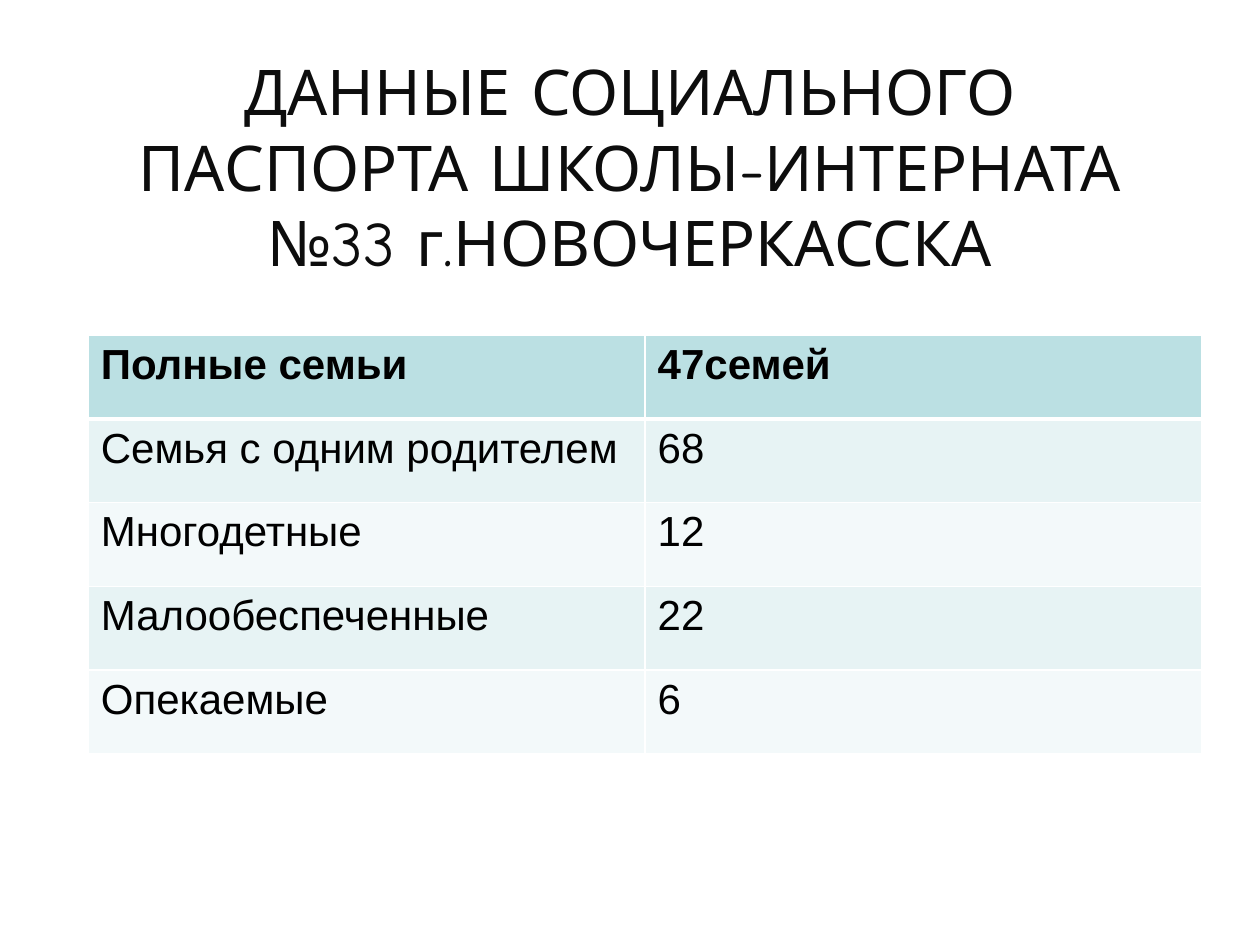
from lxml import etree
from pptx import Presentation
from pptx.dml.color import RGBColor
from pptx.enum.text import MSO_ANCHOR, PP_ALIGN
from pptx.oxml.ns import qn
from pptx.util import Cm, Pt

CENTER = PP_ALIGN.CENTER
MIDDLE = MSO_ANCHOR.MIDDLE
TITLE_ONLY = 5

TITLE = "ДАННЫЕ СОЦИАЛЬНОГО ПАСПОРТА ШКОЛЫ-ИНТЕРНАТА №33 г.НОВОЧЕРКАССКА"
FAMILIES = [
    ("Полные семьи", "47семей"),
    ("Семья с одним родителем", "68"),
    ("Многодетные", "12"),
    ("Малообеспеченные", "22"),
    ("Опекаемые", "6"),
]


def color(value):
    return RGBColor.from_string(value)


class SlideBuilder:
    title_font = "Comic Neue"
    body_font = "Arial"
    title_color = "0D0D0D"
    text_color = "000000"
    border_color = "FFFFFF"
    header_fill = "BBE0E3"
    band_fills = ("F3F9FA", "E7F3F4")

    def __init__(self, deck):
        self.slide = deck.slides.add_slide(deck.slide_layouts[TITLE_ONLY])

    def add_span(self, para, text, font, size, ink, bold=False):
        span = para.add_run()
        span.text = text
        span.font.name = font
        span.font.size = Pt(size)
        span.font.bold = bold
        span.font.color.rgb = color(ink)

    def title(self, text, left, top, width, height):
        box = self.slide.shapes.title
        box.left, box.top = Cm(left), Cm(top)
        box.width, box.height = Cm(width), Cm(height)
        box.text_frame.word_wrap = True
        box.text_frame.vertical_anchor = MIDDLE
        para = box.text_frame.paragraphs[0]
        para.alignment = CENTER
        self.add_span(para, text, self.title_font, 36, self.title_color)

    def border(self, cell, side, width):
        properties = cell._tc.get_or_add_tcPr()
        line = etree.SubElement(properties, qn(f"a:ln{side}"), w=str(Pt(width)))
        fill = etree.SubElement(line, qn("a:solidFill"))
        etree.SubElement(fill, qn("a:srgbClr"), val=self.border_color)

    def table(self, rows, left, top, width, height):
        frame = self.slide.shapes.add_table(
            len(rows), len(rows[0]), Cm(left), Cm(top), Cm(width), Cm(height))
        for row_index, row in enumerate(rows):
            header = row_index == 0
            fill = self.header_fill if header else self.band_fills[row_index % 2]
            for column_index, text in enumerate(row):
                cell = frame.table.cell(row_index, column_index)
                for side in "LRTB":
                    thick = (header and side == "B") or (row_index == 1 and side == "T")
                    self.border(cell, side, 3 if thick else 1)
                cell.fill.solid()
                cell.fill.fore_color.rgb = color(fill)
                self.add_span(cell.text_frame.paragraphs[0], text, self.body_font,
                              24, self.text_color, bold=header)


def main():
    deck = Presentation()
    deck.slide_width, deck.slide_height = Cm(25.4), Cm(19.05)
    builder = SlideBuilder(deck)
    builder.title(TITLE, 1.27, 0.76, 22.86, 5.18)
    builder.table(FAMILIES, 1.78, 6.76, 22.45, 8.43)
    deck.save("out.pptx")


if __name__ == "__main__":
    main()
